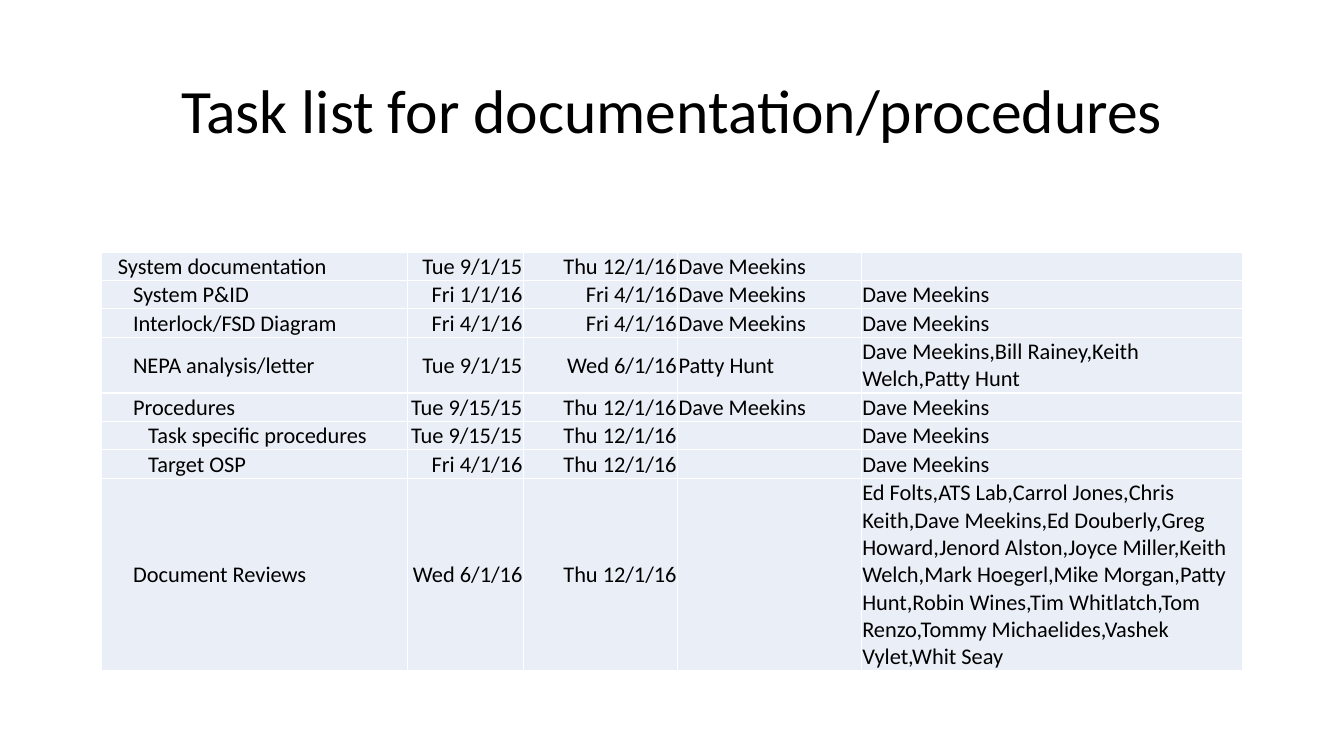
from lxml import etree
from pptx import Presentation
from pptx import util as u
from pptx.dml.color import RGBColor
from pptx.enum import text
from pptx.oxml import ns

BLACK = RGBColor(0x00, 0x00, 0x00)
WHITE = RGBColor(0xFF, 0xFF, 0xFF)
PALE_BLUE = RGBColor(0xEA, 0xEF, 0xF7)

SLIDE_W, SLIDE_H = u.Inches(13.33), u.Inches(7.5)
TITLE_BOX = (6.9, 5.33, 86.25, 19.33)
TASKS_LEFT, TASKS_TOP, TASKS_WIDTH = 7.58, 33.33, 84.85
COLUMN_SHARES = (26.8, 10.17, 13.53, 16.1, 33.4)
LINE_HEIGHT = u.Inches(0.27)
INSET = u.Inches(0.01)
INDENT = u.Inches(0.15)
BORDER = u.Pt(1)

LEFT, RIGHT = text.PP_ALIGN.LEFT, text.PP_ALIGN.RIGHT
COLUMN_ALIGNS = (LEFT, RIGHT, RIGHT, LEFT, LEFT)
TASK_FONT = {"name": "Calibri", "size": u.Pt(16), "bold": False}
TITLE_FONT = {"name": "Calibri", "size": u.Pt(44)}
CELL_FORMAT = {
    "margin_left": INSET,
    "margin_right": INSET,
    "margin_top": INSET,
    "margin_bottom": 0,
    "vertical_anchor": text.MSO_ANCHOR.MIDDLE,
}

DAVE = "Dave Meekins"
REVIEWERS = (
    "Ed Folts,ATS Lab,Carrol Jones,Chris Keith,Dave Meekins,Ed Douberly,"
    "Greg Howard,Jenord Alston,Joyce Miller,Keith Welch,Mark Hoegerl,"
    "Mike Morgan,Patty Hunt,Robin Wines,Tim Whitlatch,Tom Renzo,"
    "Tommy Michaelides,Vashek Vylet,Whit Seay"
)
# fmt: off
TASKS = [
    (1, 1, ("System documentation", "Tue 9/1/15", "Thu 12/1/16", DAVE, "")),
    (2, 1, ("System P&ID", "Fri 1/1/16", "Fri 4/1/16", DAVE, DAVE)),
    (2, 1, ("Interlock/FSD Diagram", "Fri 4/1/16", "Fri 4/1/16", DAVE, DAVE)),
    (2, 2, ("NEPA analysis/letter", "Tue 9/1/15", "Wed 6/1/16", "Patty Hunt",
            "Dave Meekins,Bill Rainey,Keith Welch,Patty Hunt")),
    (2, 1, ("Procedures", "Tue 9/15/15", "Thu 12/1/16", DAVE, DAVE)),
    (3, 1, ("Task specific procedures", "Tue 9/15/15", "Thu 12/1/16", "", DAVE)),
    (3, 1, ("Target OSP", "Fri 4/1/16", "Thu 12/1/16", "", DAVE)),
    (2, 7, ("Document Reviews", "Wed 6/1/16", "Thu 12/1/16", "", REVIEWERS)),
]


def across(share):
    return int(SLIDE_W * share / 100)


def down(share):
    return int(SLIDE_H * share / 100)


def apply(target, formats):
    for attribute, value in formats.items():
        setattr(target, attribute, value)


def write(paragraph, words, font, align):
    paragraph.alignment = align
    if words:
        run = paragraph.add_run()
        run.text = words
        apply(run.font, font)
        run.font.color.rgb = BLACK
    else:
        etree.SubElement(paragraph._p, ns.qn("a:endParaRPr"),
                         sz=str(int(font["size"].pt * 100)))


def add_title(slide, words):
    title = slide.shapes.title
    left, top, width, height = TITLE_BOX
    apply(title, {"left": across(left), "top": down(top),
                  "width": across(width), "height": down(height)})
    apply(title.text_frame, {"word_wrap": True,
                             "auto_size": text.MSO_AUTO_SIZE.NONE,
                             "vertical_anchor": text.MSO_ANCHOR.MIDDLE})
    heading = title.text_frame.paragraphs[0]
    heading.line_spacing = 0.9
    write(heading, words, TITLE_FONT, text.PP_ALIGN.CENTER)


def add_borders(cell):
    properties = cell._tc.get_or_add_tcPr()
    for side in ("lnL", "lnR", "lnT", "lnB"):
        edge = etree.SubElement(properties, ns.qn(f"a:{side}"), w=str(BORDER))
        paint = etree.SubElement(edge, ns.qn("a:solidFill"))
        etree.SubElement(paint, ns.qn("a:srgbClr"), val=str(WHITE))


def fill_cell(cell, words, align, level):
    apply(cell, CELL_FORMAT)
    cell.margin_left = INSET + INDENT * level
    add_borders(cell)
    cell.fill.solid()
    cell.fill.fore_color.rgb = PALE_BLUE
    write(cell.text_frame.paragraphs[0], words, TASK_FONT, align)


def add_task_table(slide):
    heights = [LINE_HEIGHT * lines + INSET for _, lines, _ in TASKS]
    width = across(TASKS_WIDTH)
    tasks = slide.shapes.add_table(
        len(TASKS), len(COLUMN_SHARES), across(TASKS_LEFT), down(TASKS_TOP),
        width, sum(heights)).table
    apply(tasks, {"first_row": False, "horz_banding": False})
    for column, share in zip(tasks.columns, COLUMN_SHARES):
        column.width = int(width * share / 100)
    for row, height, (level, _, entries) in zip(tasks.rows, heights, TASKS):
        row.height = height
        for index, (cell, words, align) in enumerate(
                zip(row.cells, entries, COLUMN_ALIGNS)):
            fill_cell(cell, words, align, 0 if index else level)


def main():
    deck = Presentation()
    apply(deck, {"slide_width": SLIDE_W, "slide_height": SLIDE_H})
    slide = deck.slides.add_slide(deck.slide_layouts[5])
    add_title(slide, "Task list for documentation/procedures")
    add_task_table(slide)
    deck.save("out.pptx")


if __name__ == "__main__":
    main()
